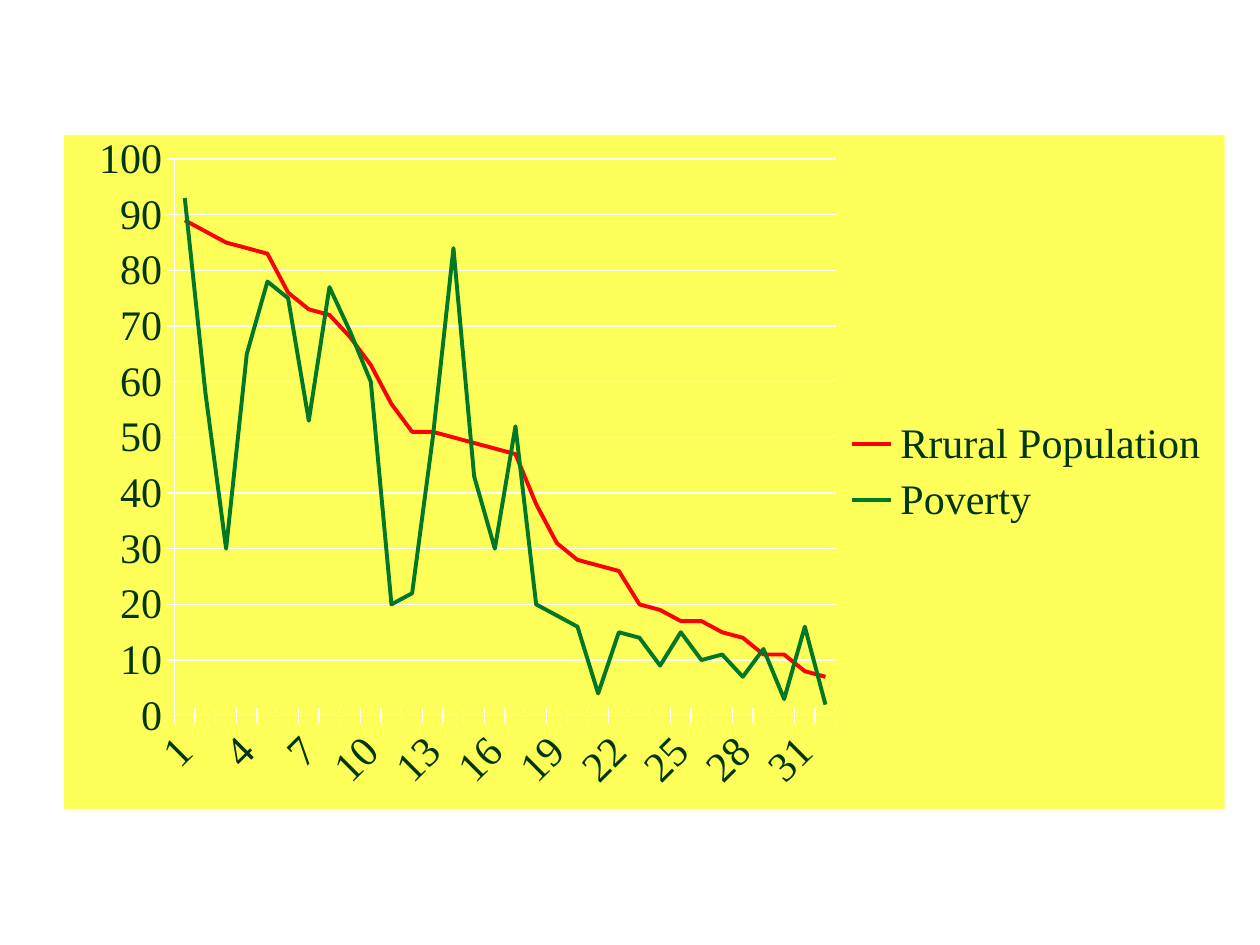
"""Builds a slide with a line chart of rural population and poverty."""
from pptx import Presentation
from pptx.chart.data import CategoryChartData
from pptx.dml.color import RGBColor
from pptx.enum.chart import XL_CHART_TYPE, XL_LEGEND_POSITION, XL_TICK_MARK
from pptx.oxml import parse_xml
from pptx.oxml.ns import nsdecls, qn
from pptx.util import Inches, Pt

LINE = XL_CHART_TYPE.LINE
LEGEND_RIGHT = XL_LEGEND_POSITION.RIGHT
TICK_CROSS = XL_TICK_MARK.CROSS

WHITE = RGBColor(0xFF, 0xFF, 0xFF)
YELLOW = RGBColor(0xFF, 0xFF, 0x59)
RED = RGBColor(0xFF, 0x00, 0x00)
GREEN = RGBColor(0x00, 0x78, 0x25)
DARK_GREEN = RGBColor(0x00, 0x36, 0x10)

RURAL_POPULATION = [
    89, 87, 85, 84, 83, 76, 73, 72, 68, 63, 56, 51, 51, 50, 49, 48,
    47, 38, 31, 28, 27, 26, 20, 19, 17, 17, 15, 14, 11, 11, 8, 7,
]
POVERTY = [
    93, 58, 30, 65, 78, 75, 53, 77, 69, 60, 20, 22, 50, 84, 43, 30,
    52, 20, 18, 16, 4, 15, 14, 9, 15, 10, 11, 7, 12, 3, 16, 2,
]
SERIES = [
    ("Rrural Population", RURAL_POPULATION, RED),
    ("Poverty", POVERTY, GREEN),
]


class SlideBuilder:
    """Holds the chart style and the current slide."""

    font_name = "Times New Roman"
    font_size = Pt(24)
    font_color = DARK_GREEN
    series_width = Pt(2.25)
    axis_width = Pt(0.75)

    def __init__(self, slide):
        self.slide = slide

    def add_line_chart(self, left, top, width, height, series_rows):
        chart_data = CategoryChartData()
        chart_data.categories = [str(i + 1) for i in range(len(series_rows[0][1]))]
        for name, values, _ in series_rows:
            chart_data.add_series(name, values)
        chart = self.slide.shapes.add_chart(
            LINE, left, top, width, height, chart_data
        ).chart
        chart.has_title = False
        chart.font.name = self.font_name
        chart.font.size = self.font_size
        chart.font.color.rgb = self.font_color
        chart.has_legend = True
        chart.legend.position = LEGEND_RIGHT
        chart.legend.include_in_layout = False
        chart.plots[0].vary_by_categories = False
        for series, (_, _, color) in zip(chart.plots[0].series, series_rows):
            series.smooth = False
            series.format.line.color.rgb = color
            series.format.line.width = self.series_width
        return chart

    def style_line(self, line):
        line.color.rgb = WHITE
        line.width = self.axis_width

    def style_axes(self, chart, maximum, step, label_skip):
        category_axis, value_axis = chart.category_axis, chart.value_axis
        for axis in (category_axis, value_axis):
            axis.major_tick_mark = TICK_CROSS
            self.style_line(axis.format.line)
        value_axis.minimum_scale = 0
        value_axis.maximum_scale = maximum
        value_axis.major_unit = step
        value_axis.has_major_gridlines = True
        self.style_line(value_axis.major_gridlines.format.line)
        category_axis.tick_labels.font.size = self.font_size
        element = next(chart.element.iter(qn("c:catAx")))
        next(element.iter(qn("a:bodyPr"))).set("rot", "-2700000")
        element.find(qn("c:noMultiLvlLbl")).addprevious(
            parse_xml(f'<c:tickLblSkip {nsdecls("c")} val="{label_skip}"/>')
        )

    def fill_chart(self, chart, color):
        chart.element.find(qn("c:txPr")).addprevious(parse_xml(
            f'<c:spPr {nsdecls("c", "a")}><a:solidFill><a:srgbClr val="{color}"/>'
            "</a:solidFill><a:ln><a:noFill/></a:ln></c:spPr>"
        ))

    def place_plot(self, chart, x, y, width, height):
        plot_area = next(chart.element.iter(qn("c:plotArea")))
        for layout in plot_area.findall(qn("c:layout")):
            plot_area.remove(layout)
        sizes = {"x": x, "y": y, "w": width, "h": height}
        values = "".join(f'<c:{key} val="{value}"/>' for key, value in sizes.items())
        plot_area.insert(0, parse_xml(
            f'<c:layout {nsdecls("c")}><c:manualLayout><c:layoutTarget val="inner"/>'
            f'<c:xMode val="edge"/><c:yMode val="edge"/>{values}'
            "</c:manualLayout></c:layout>"
        ))


def main():
    presentation = Presentation()
    presentation.slide_width = Inches(10)
    presentation.slide_height = Inches(7.5)
    slide = presentation.slides.add_slide(presentation.slide_layouts[6])
    builder = SlideBuilder(slide)
    chart = builder.add_line_chart(
        Inches(0.51), Inches(1.07), Inches(9.21), Inches(5.35), SERIES
    )
    builder.style_axes(chart, maximum=100, step=10, label_skip=3)
    builder.fill_chart(chart, YELLOW)
    builder.place_plot(chart, 0.095, 0.036, 0.57, 0.826)
    presentation.save("out.pptx")


if __name__ == "__main__":
    main()
